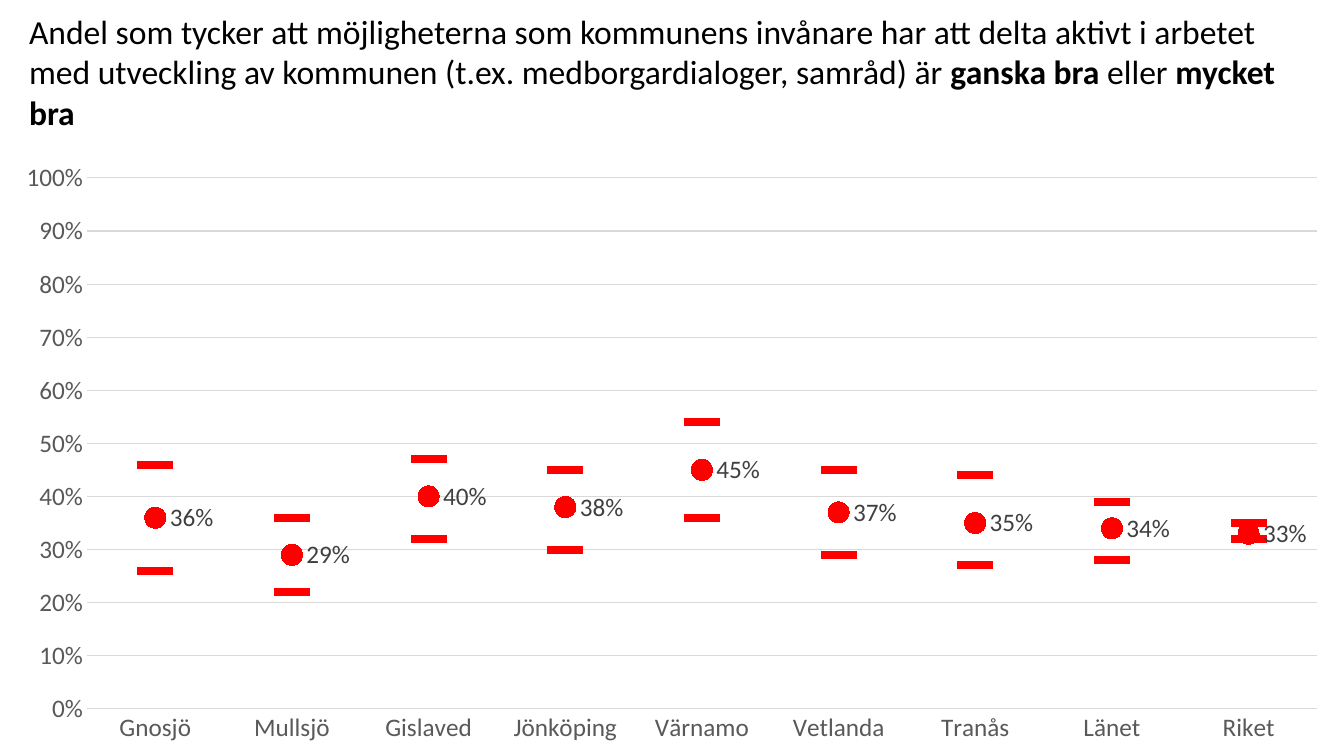
from dataclasses import dataclass

from lxml import etree
from pptx import Presentation
from pptx import util as u
from pptx.chart.data import CategoryChartData
from pptx.dml.color import RGBColor
from pptx.enum import chart as charts, text
from pptx.oxml import ns

SLIDE_W, SLIDE_H = 1344, 756
SCALE = u.Inches(40 / 3) / SLIDE_W


@dataclass(frozen=True)
class Theme:
    font: str = "Calibri"
    title_size: int = 24
    chart_size: int = 18
    ink: str = "000000"
    axis: str = "595959"
    label: str = "404040"
    grid: str = "D9D9D9"
    marker: str = "FF0000"


THEME = Theme()

HEADING = [
    ("Andel som tycker att möjligheterna som kommunens invånare har att delta "
     "aktivt i arbetet med utveckling av kommunen (t.ex. medborgardialoger, "
     "samråd) är ", False),
    ("ganska bra", True),
    (" eller ", False),
    ("mycket bra", True),
]

SHARES = {
    "Gnosjö": (0.26, 0.36, 0.46),
    "Mullsjö": (0.22, 0.29, 0.36),
    "Gislaved": (0.32, 0.40, 0.47),
    "Jönköping": (0.30, 0.38, 0.45),
    "Värnamo": (0.36, 0.45, 0.54),
    "Vetlanda": (0.29, 0.37, 0.45),
    "Tranås": (0.27, 0.35, 0.44),
    "Länet": (0.28, 0.34, 0.39),
    "Riket": (0.32, 0.33, 0.35),
}

DASH = (charts.XL_MARKER_STYLE.DASH, 25)
DOT = (charts.XL_MARKER_STYLE.CIRCLE, 15)
MARKERS = {"Series 1": DASH, "Series 2": DOT, "Series 3": DASH}


def px(length):
    return u.Emu(round(length * SCALE))


def style_font(font, size, color):
    font.name = THEME.font
    font.size = u.Pt(size)
    font.color.rgb = RGBColor.from_string(color)


def style_line(line, color, width=0.75):
    line.color.rgb = RGBColor.from_string(color)
    line.width = u.Pt(width)


def fill_title(title, left, top, width, height):
    title.left, title.top = px(left), px(top)
    title.width, title.height = px(width), px(height)
    frame = title.text_frame
    frame.margin_left = frame.margin_right = 0
    frame.margin_top = frame.margin_bottom = 0
    frame.vertical_anchor = text.MSO_ANCHOR.BOTTOM
    frame.auto_size = text.MSO_AUTO_SIZE.NONE
    frame.word_wrap = True
    heading = frame.paragraphs[0]
    heading.alignment = text.PP_ALIGN.LEFT
    style_font(heading.font, THEME.title_size, THEME.ink)
    for words, bold in HEADING:
        run = heading.add_run()
        run.text = words
        run.font.bold = bold


def style_axis(axis):
    axis.major_tick_mark = axis.minor_tick_mark = charts.XL_TICK_MARK.NONE
    style_font(axis.tick_labels.font, THEME.chart_size, THEME.axis)


def style_series(series):
    series.smooth = False
    series.format.line.fill.background()
    marker = series.marker
    marker.style, marker.size = MARKERS[series.name]
    marker.format.fill.solid()
    marker.format.fill.fore_color.rgb = RGBColor.from_string(THEME.marker)
    style_line(marker.format.line, THEME.marker)


def label_values(series):
    labels = series.data_labels
    labels.show_value = True
    labels.position = charts.XL_LABEL_POSITION.RIGHT
    labels.number_format = "0%"
    labels.number_format_is_linked = False
    style_font(labels.font, THEME.chart_size, THEME.label)


def place_plot(chart, x, y, w, h):
    plot_area = chart.plots[0]._element.getparent()
    for layout in plot_area.findall(ns.qn("c:layout")):
        plot_area.remove(layout)
    layout = etree.Element(ns.qn("c:layout"))
    manual = etree.SubElement(layout, ns.qn("c:manualLayout"))
    settings = {"layoutTarget": "inner", "xMode": "edge", "yMode": "edge",
                "x": x, "y": y, "w": w, "h": h}
    for tag, value in settings.items():
        etree.SubElement(manual, ns.qn(f"c:{tag}")).set("val", str(value))
    plot_area.insert(0, layout)


def add_share_chart(slide, left, top, width, height):
    shares = CategoryChartData(number_format="0%")
    shares.categories = list(SHARES)
    for name, values in zip(MARKERS, zip(*SHARES.values())):
        shares.add_series(name, values)
    chart = slide.shapes.add_chart(
        charts.XL_CHART_TYPE.LINE_MARKERS,
        px(left), px(top), px(width), px(height), shares).chart
    chart.has_legend = False
    chart.has_title = False
    style_font(chart.font, THEME.chart_size, THEME.ink)

    places, percent = chart.category_axis, chart.value_axis
    for axis in (places, percent):
        style_axis(axis)
    style_line(places.format.line, THEME.grid)
    percent.minimum_scale, percent.maximum_scale = 0, 1
    percent.major_unit = 0.1
    percent.tick_labels.number_format = "0%"
    percent.tick_labels.number_format_is_linked = False
    percent.format.line.fill.background()
    style_line(percent.major_gridlines.format.line, THEME.grid)

    plot = chart.plots[0]
    plot.vary_by_categories = False
    for series in plot.series:
        style_series(series)
    label_values(plot.series[1])
    place_plot(chart, 87 / width, 27 / height, 1230 / width, 531 / height)


def main():
    deck = Presentation()
    deck.slide_width, deck.slide_height = px(SLIDE_W), px(SLIDE_H)
    slide = deck.slides.add_slide(deck.slide_layouts.get_by_name("Title Only"))
    fill_title(slide.shapes.title, 29, 43, 1294, 89)
    add_share_chart(slide, 0, 151, SLIDE_W, 605)
    deck.save("out.pptx")


if __name__ == "__main__":
    main()
